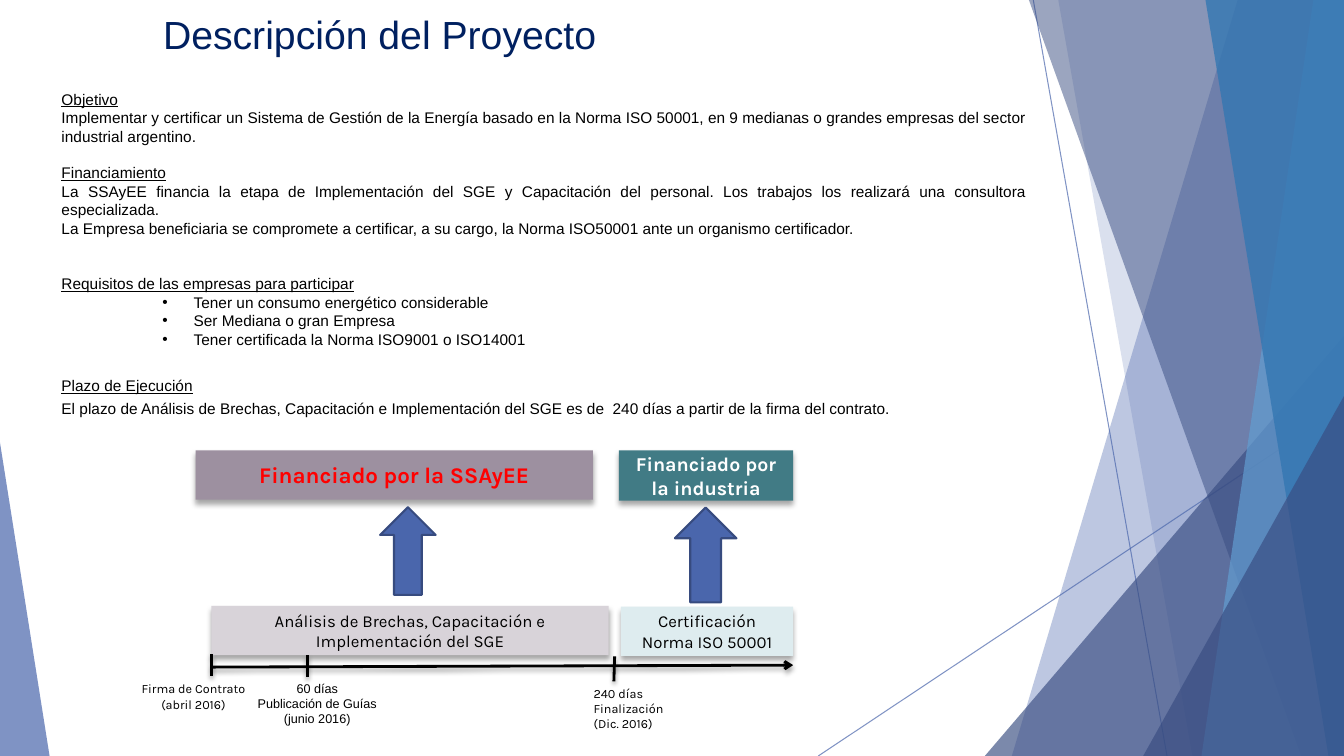
from lxml.etree import SubElement
from pptx import Presentation
from pptx.dml.color import RGBColor
from pptx.enum.shapes import MSO_CONNECTOR as Connector, MSO_SHAPE as Shape
from pptx.enum.text import MSO_ANCHOR as Anchor, PP_ALIGN as Align
from pptx.oxml.ns import qn
from pptx.util import Cm, Pt

WIDTH, HEIGHT = 33.87, 19.05
BLACK = RGBColor(0x00, 0x00, 0x00)
WHITE = RGBColor(0xFF, 0xFF, 0xFF)
RED = RGBColor(0xFF, 0x00, 0x00)
NAVY = RGBColor(0x00, 0x20, 0x60)
BLUE = RGBColor(0x4A, 0x66, 0xAC)
DARK_BLUE = RGBColor(0x38, 0x4C, 0x81)
EDGE_BLUE = RGBColor(0x37, 0x4B, 0x7F)
SKY = RGBColor(0x62, 0x9D, 0xD1)
OCEAN = RGBColor(0x34, 0x77, 0xB2)
MAUVE = RGBColor(0x9D, 0x90, 0xA0)
PALE_MAUVE = RGBColor(0xD8, 0xD3, 0xD9)
TEAL = RGBColor(0x41, 0x7B, 0x85)
PALE_TEAL = RGBColor(0xDE, 0xEC, 0xEF)


class ProjectSlide:
    """Draws the elements of the project description slide in one style."""

    def __init__(self, slide):
        self.shapes = slide.shapes

    def finish(self, shape, alpha=None, shadow=None):
        properties = shape._element.spPr
        if alpha:
            color = properties.find(".//" + qn("a:srgbClr"))
            SubElement(color, qn("a:alpha"), val=str(alpha * 1000))
        effects = SubElement(properties, qn("a:effectLst"))
        if shadow:
            blur, distance = shadow
            outer = SubElement(effects, qn("a:outerShdw"), blurRad=str(Pt(blur)),
                               dist=str(Pt(distance)), dir="5400000", rotWithShape="0")
            black = SubElement(outer, qn("a:srgbClr"), val=str(BLACK))
            SubElement(black, qn("a:alpha"), val="35000")

    def paint(self, shape, color, edge=None, **effects):
        shape.fill.solid()
        shape.fill.fore_color.rgb = color
        if edge:
            shape.line.color.rgb = edge
            shape.line.width = Pt(1.5)
        else:
            shape.line.fill.background()
        self.finish(shape, **effects)

    def band(self, top_x, foot_x, color, alpha):
        outline = self.shapes.build_freeform(Cm(top_x), 0)
        outline.add_line_segments([(Cm(x), Cm(y)) for x, y in (
            (WIDTH, 0), (WIDTH, HEIGHT), (foot_x, HEIGHT))])
        self.paint(outline.convert_to_shape(), color, alpha=alpha)

    def triangle(self, box, tip, color, alpha):
        triangle = self.shapes.add_shape(Shape.ISOSCELES_TRIANGLE, *map(Cm, box))
        triangle.adjustments[0] = tip
        self.paint(triangle, color, alpha=alpha)

    def arrow(self, box):
        self.paint(self.shapes.add_shape(Shape.UP_ARROW, *map(Cm, box)), BLUE, EDGE_BLUE)

    def line(self, ends, color, width, head=False, **effects):
        line = self.shapes.add_connector(Connector.STRAIGHT, *map(Cm, ends))
        line.line.color.rgb = color
        line.line.width = Pt(width)
        if head:
            SubElement(line.line._get_or_add_ln(), qn("a:tailEnd"), type="arrow")
        self.finish(line, **effects)

    def fill_text(self, frame, paragraphs, size, font="Arial", color=BLACK, bold=False,
                  align=Align.CENTER):
        frame.word_wrap = True
        for index, (words, layout, style) in enumerate(paragraphs):
            paragraph = frame.paragraphs[0] if index == 0 else frame.add_paragraph()
            for key, value in {"alignment": align, **layout}.items():
                setattr(paragraph, key, value)
            if paragraph.level:
                properties = paragraph._p.get_or_add_pPr()
                properties.set("marL", str(Cm(3.33)))
                properties.set("indent", str(Cm(-0.79)))
                SubElement(properties, qn("a:buFont"), typeface="Arial")
                SubElement(properties, qn("a:buChar"), char="•")
            run = paragraph.add_run()
            run.text = words
            run.font.color.rgb = color
            for key, value in {"size": Pt(size), "name": font, "bold": bold, **style}.items():
                setattr(run.font, key, value)

    def text(self, box, paragraphs, size, margin_top=0.13, **style):
        frame = self.shapes.add_textbox(*map(Cm, box)).text_frame
        frame.margin_top = Cm(margin_top)
        self.fill_text(frame, paragraphs, size, **style)

    def block(self, box, words, fill, size, **style):
        block = self.shapes.add_shape(Shape.RECTANGLE, *map(Cm, box))
        self.paint(block, fill, shadow=(4, 3))
        block.text_frame.vertical_anchor = Anchor.MIDDLE
        self.fill_text(block.text_frame, plain(words), size, font="Karla", **style)


def plain(*lines):
    return [(line, {}, {}) for line in lines]


def draw_background(page):
    page.line((26.04, 0, 29.41, HEIGHT), BLUE, 0.75, alpha=70)
    page.line((WIDTH, 10.24, 20.62, HEIGHT), BLUE, 0.75, alpha=70)
    page.band(31.19, 25.5, BLUE, 36)
    page.band(26.67, 30.05, BLUE, 20)
    page.triangle((24.82, 8.46, 9.05, 10.59), 1, DARK_BLUE, 66)
    page.band(25.93, 32.79, DARK_BLUE, 50)
    page.band(33.1, 30.28, SKY, 70)
    page.band(30.38, 33.48, OCEAN, 80)
    page.triangle((28.81, 9.98, 5.06, 9.07), 1, DARK_BLUE, 66)
    page.triangle((0, 11.15, 1.25, 7.9), 0, BLUE, 70)


def draw_description(page):
    heading = {"underline": True}
    bullet = {"level": 2}
    loose = {"line_spacing": 1.25}
    page.text((1.3, 2.06, 24.84, 10), [
        ("Objetivo", {}, heading),
        ("Implementar y certificar un Sistema de Gestión de la Energía basado en la Norma "
         "ISO 50001, en 9 medianas o grandes empresas del sector industrial argentino.", {}, {}),
        ("Financiamiento", {"space_before": Pt(13)}, heading),
        ("La SSAyEE financia la etapa de Implementación del SGE y Capacitación del personal. "
         "Los trabajos los realizará una consultora especializada.", {}, {}),
        ("La Empresa beneficiaria se compromete a certificar, a su cargo, la Norma ISO50001 "
         "ante un organismo certificador.", {}, {}),
        ("Requisitos de las empresas para participar", {"space_before": Pt(26.5)}, heading),
        ("Tener un consumo energético considerable", bullet, {}),
        ("Ser Mediana o gran Empresa", bullet, {}),
        ("Tener certificada la Norma ISO9001 o ISO14001", bullet, {}),
        ("Plazo de Ejecución", {**loose, "space_before": Pt(16.5)}, heading),
        ("El plazo de Análisis de Brechas, Capacitación e Implementación del SGE es de  "
         "240 días a partir de la firma del contrato.", loose, {}),
    ], 11, margin_top=0.2, align=Align.JUSTIFY)
    page.text((1.68, 0.13, 15.77, 1.45), plain("Descripción del Proyecto"), 28, color=NAVY)


def draw_schedule(page):
    page.block((4.93, 11.35, 10.01, 1.24), "Financiado por la SSAyEE", MAUVE, 16,
               color=RED, bold=True)
    page.block((15.65, 15.29, 4.34, 1.24), "Certificación Norma ISO 50001", PALE_TEAL, 12)
    page.block((5.33, 15.27, 10.01, 1.24),
               "Análisis de Brechas, Capacitación e Implementación del SGE", PALE_MAUVE, 12)
    page.block((15.6, 11.35, 4.39, 1.27), "Financiado por la industria", TEAL, 14,
               color=WHITE, bold=True)
    page.arrow((9.58, 12.78, 1.4, 2.21))
    page.arrow((17.01, 12.79, 1.55, 2.39))
    page.line((5.33, 16.81, 19.99, 16.76), BLACK, 2, head=True, shadow=(3, 2))
    for tick in ((5.33, 16.48, 5.33, 17.04), (7.75, 16.51, 7.75, 17.07),
                 (15.49, 16.54, 15.47, 17.17)):
        page.line(tick, BLACK, 2, shadow=(3, 2))
    page.text((14.71, 17.15, 2.74, 1.42), plain("240 días", "Finalización", "(Dic. 2016)"), 9,
              font="Karla", align=Align.LEFT)
    page.text((2.97, 17.04, 3.81, 1.55), plain("Firma de Contrato", "(abril 2016)"), 9,
              font="Karla")
    page.text((5.94, 17.02, 4.11, 1.42),
              plain("60 días", "Publicación de Guías", "(junio 2016)"), 9)


def main():
    deck = Presentation()
    deck.slide_width, deck.slide_height = Cm(WIDTH), Cm(HEIGHT)
    page = ProjectSlide(deck.slides.add_slide(deck.slide_layouts[6]))
    draw_background(page)
    draw_description(page)
    draw_schedule(page)
    deck.save("out.pptx")


if __name__ == "__main__":
    main()
